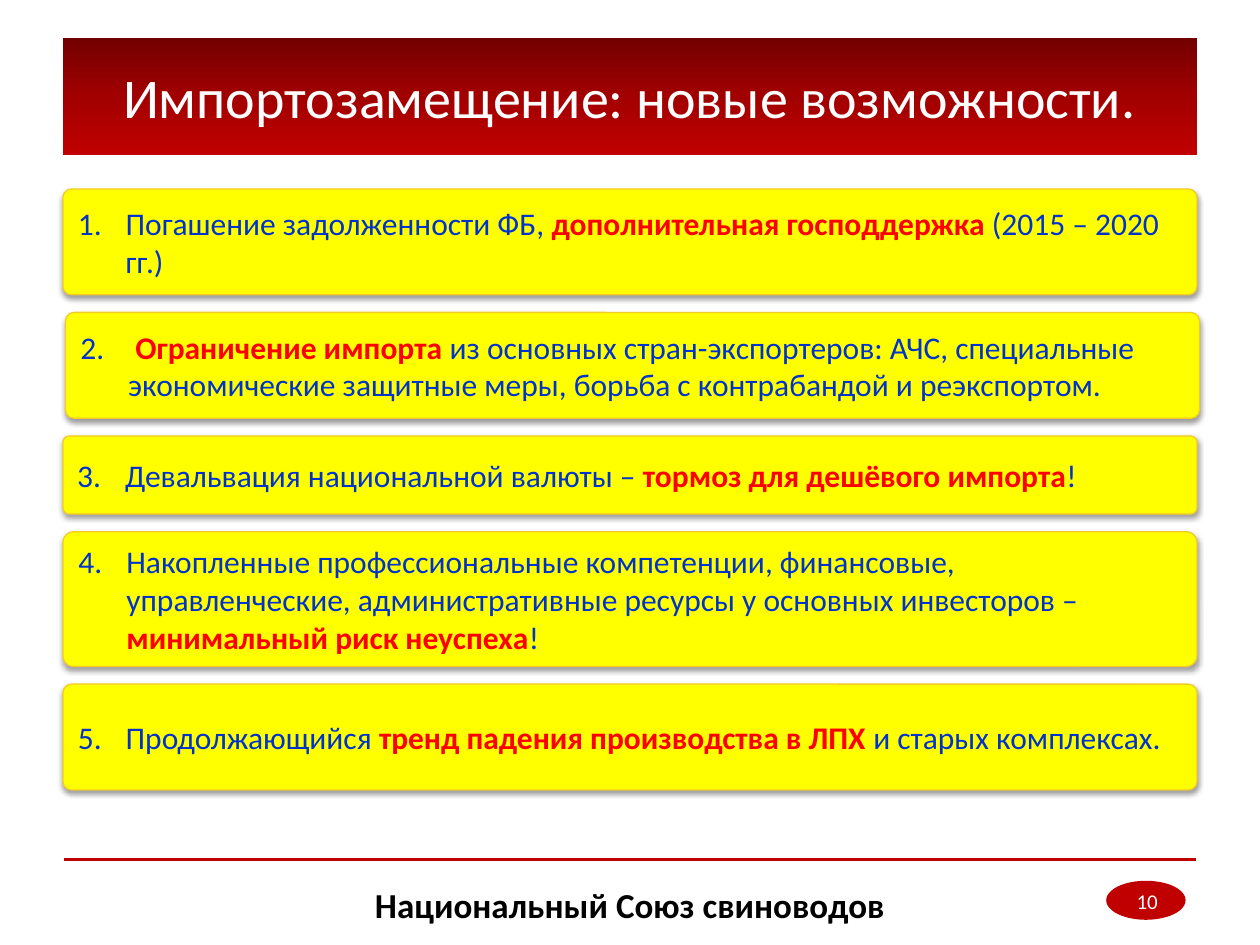
from copy import deepcopy
from lxml.etree import SubElement
from pptx import Presentation
from pptx.dml.color import RGBColor
from pptx.enum.shapes import MSO_CONNECTOR, MSO_SHAPE
from pptx.enum.text import MSO_ANCHOR, PP_ALIGN
from pptx.oxml import parse_xml
from pptx.oxml.ns import nsdecls, qn
from pptx.util import Inches, Pt


def color(value):
    return RGBColor.from_string(value)


def write(box, spans, size, align=PP_ALIGN.CENTER, number=None):
    """Fill a box with one paragraph of (text, colour, bold) spans."""
    frame = box.text_frame
    frame.word_wrap = True
    frame.vertical_anchor = MSO_ANCHOR.MIDDLE
    para = frame.paragraphs[0]
    para.alignment = align
    if number:
        properties = para._p.get_or_add_pPr()
        properties.set("marL", str(Inches(0.38)))
        properties.set("indent", str(Inches(-0.38)))
        SubElement(properties, qn("a:buFont"), typeface="+mj-lt")
        SubElement(properties, qn("a:buAutoNum"), type="arabicPeriod", startAt=str(number))
    for text, tint, bold in spans:
        span = para.add_run()
        span.text = text
        span.font.name = "Calibri"
        span.font.size = Pt(size)
        span.font.bold = bold
        span.font.color.rgb = color(tint)


BLUE, RED, WHITE, DARK_RED = "0033CC", "FF0000", "FFFFFF", "C00000"

deck = Presentation()
deck.slide_width, deck.slide_height = Inches(10), Inches(7.5)
page = deck.slides.add_slide(deck.slide_layouts[6])
shapes = page.shapes

# Footer: page number oval and rule
oval = shapes.add_shape(MSO_SHAPE.OVAL, Inches(8.78), Inches(6.99), Inches(0.63), Inches(0.31))
oval.shadow.inherit = False
oval.fill.solid()
oval.fill.fore_color.rgb = color(DARK_RED)
oval.line.fill.background()

rule = shapes.add_connector(MSO_CONNECTOR.STRAIGHT, Inches(9.49), Inches(6.82), Inches(0.51), Inches(6.82))
rule.line.color.rgb = color(DARK_RED)
rule.line.width = Pt(1.5)
SubElement(rule._element.spPr, qn("a:effectLst"))

# Title banner with a three-stop gradient
banner = shapes.add_shape(MSO_SHAPE.RECTANGLE, Inches(0.5), Inches(0.3), Inches(9), Inches(0.93))
banner.shadow.inherit = False
banner.line.fill.background()
banner.fill.gradient()
banner.fill.gradient_angle = 270
first_stop = banner._element.spPr.find(".//" + qn("a:gs"))
first_stop.addnext(deepcopy(first_stop))
for stop, position, tint in zip(banner.fill.gradient_stops, (0, 0.5, 1), ("720000", "A20000", DARK_RED)):
    stop.position = position
    stop.color.rgb = color(tint)
write(banner, [("Импортозамещение: новые возможности.", WHITE, False)], 32)

# Organisation name
footer = shapes.add_textbox(Inches(2.01), Inches(6.98), Inches(5.98), Inches(0.4))
write(footer, [("Национальный Союз свиноводов", "000000", True)], 20)

# Numbered cards: left, height, plain text, highlighted text, plain text
cards = [
    (0.5, 0.84, "Погашение задолженности ФБ, ", "дополнительная господдержка ", "(2015 – 2020 гг.)"),
    (0.52, 0.84, " ", "Ограничение импорта ",
     "из основных стран-экспортеров: АЧС, специальные экономические защитные меры, "
     "борьба с контрабандой и реэкспортом."),
    (0.5, 0.62, "Девальвация национальной валюты – ", "тормоз для дешёвого импорта", "!"),
    (0.5, 1.07, "Накопленные профессиональные компетенции, финансовые, управленческие, "
     "административные ресурсы у основных инвесторов – ", "минимальный риск неуспеха", "!"),
    (0.5, 0.84, "Продолжающийся ", "тренд падения производства в ЛПХ ", "и старых комплексах."),
]
top, gap = 1.5, 0.14
for number, (left, height, before, accent, after) in enumerate(cards, start=1):
    card = shapes.add_shape(MSO_SHAPE.ROUNDED_RECTANGLE, Inches(left), Inches(top), Inches(9), Inches(height))
    card.adjustments[0] = 0.08
    card.fill.solid()
    card.fill.fore_color.rgb = color("FFFF00")
    card.line.color.rgb = color("F4CB27")
    card.line.width = Pt(0.75)
    card.shadow.inherit = False
    card._element.spPr.find(qn("a:effectLst")).append(parse_xml(
        f'<a:outerShdw {nsdecls("a")} blurRad="{Pt(3.1)}" dist="{Pt(1.6)}" dir="5400000" rotWithShape="0">'
        '<a:srgbClr val="000000"><a:alpha val="38000"/></a:srgbClr></a:outerShdw>'))
    spans = [(before, BLUE, False), (accent, RED, True), (after, BLUE, False)]
    write(card, spans, 18, PP_ALIGN.LEFT, number)
    top += height + gap

# Page number, right-aligned over the oval
page_number = shapes.add_textbox(Inches(7.36), Inches(6.95), Inches(2.33), Inches(0.4))
page_number.text_frame.margin_right = Inches(0.5)
write(page_number, [("10", WHITE, False)], 12, PP_ALIGN.RIGHT)

deck.save("out.pptx")
